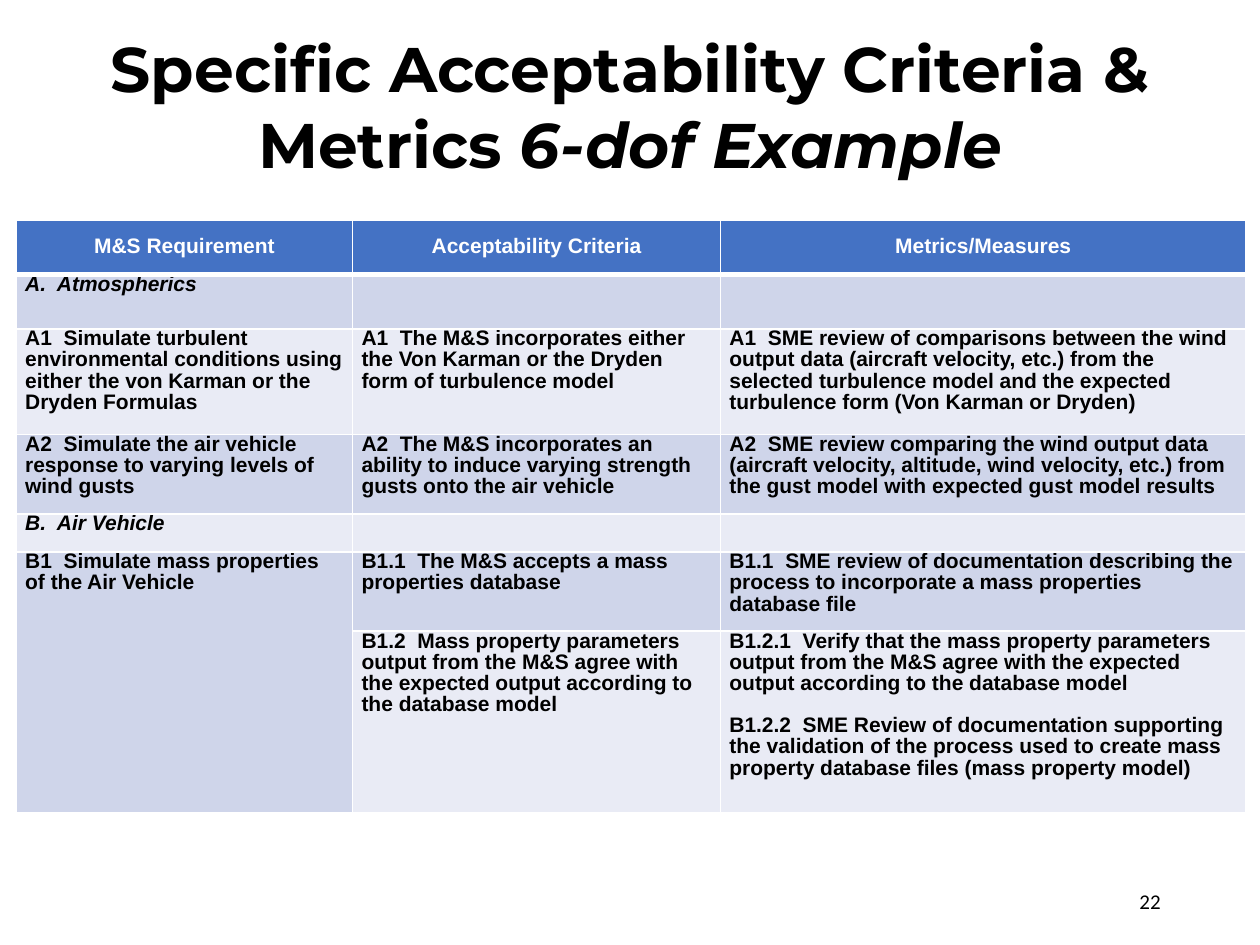
from lxml import etree
from pptx import Presentation
from pptx import util as u
from pptx.dml.color import RGBColor
from pptx.enum import text
from pptx.oxml import ns

WHITE = RGBColor(0xFF, 0xFF, 0xFF)
BLACK = RGBColor(0, 0, 0)
HEADER_BLUE = RGBColor(0x44, 0x72, 0xC4)
DARK_BAND = RGBColor(0xCF, 0xD5, 0xEA)
LIGHT_BAND = RGBColor(0xE9, 0xEB, 0xF5)

TITLE_FONT = {"name": "Montserrat", "size": u.Pt(36), "bold": True}
CELL_FONT = {"name": "Arial", "size": u.Pt(12), "bold": True}
NUMBER_FONT = {"name": "Calibri", "size": u.Pt(12)}
CELL_MARGINS = {
    "margin_left": u.Inches(0.07),
    "margin_right": u.Inches(0.07),
    "margin_top": 0,
    "margin_bottom": 0,
}

COLUMN_WIDTHS = [2.67, 2.92, 4.17]
ROW_HEIGHTS = [0.43, 0.43, 0.84, 0.63, 0.3, 0.63, 1.44]
SECTION_ROWS = (1, 4)
CRITERIA = [
    ["M&S Requirement", "Acceptability Criteria", "Metrics/Measures"],
    ["A.  Atmospherics", "", ""],
    [
        "A1  Simulate turbulent environmental conditions using either the "
        "von Karman or the Dryden Formulas",
        "A1  The M&S incorporates either the Von Karman or the Dryden form "
        "of turbulence model",
        "A1  SME review of comparisons between the wind output data (aircraft "
        "velocity, etc.) from the selected turbulence model and the expected "
        "turbulence form (Von Karman or Dryden)",
    ],
    [
        "A2  Simulate the air vehicle response to varying levels of wind gusts",
        "A2  The M&S incorporates an ability to induce varying strength gusts "
        "onto the air vehicle",
        "A2  SME review comparing the wind output data (aircraft velocity, "
        "altitude, wind velocity, etc.) from the gust model with expected "
        "gust model results",
    ],
    ["B.  Air Vehicle", "", ""],
    [
        "B1  Simulate mass properties of the Air Vehicle",
        "B1.1  The M&S accepts a mass properties database",
        "B1.1  SME review of documentation describing the process to "
        "incorporate a mass properties database file",
    ],
    [
        "",
        "B1.2  Mass property parameters output from the M&S agree with the "
        "expected output according to the database model",
        "B1.2.1  Verify that the mass property parameters output from the M&S "
        "agree with the expected output according to the database model\n"
        "B1.2.2  SME Review of documentation supporting the validation of the "
        "process used to create mass property database files "
        "(mass property model)",
    ],
]


def apply_format(target, values):
    """Set each named attribute on the target."""
    for name, value in values.items():
        setattr(target, name, value)


def add_span(para, words, font, color=BLACK, italic=False):
    """Add a formatted run of words to a paragraph."""
    span = para.add_run()
    span.text = words
    apply_format(span.font, {**font, "italic": italic})
    span.font.color.rgb = color


def place(box, left, top, width, height):
    """Move and size a shape, in inches."""
    values = {"left": left, "top": top, "width": width, "height": height}
    apply_format(box, {name: u.Inches(value) for name, value in values.items()})


def add_title(page):
    """Fill the title placeholder."""
    box = page.shapes.title
    place(box, 0.69, 0.18, 8.62, 1.31)
    apply_format(box.text_frame, {
        "word_wrap": True,
        "vertical_anchor": text.MSO_ANCHOR.MIDDLE,
        "auto_size": text.MSO_AUTO_SIZE.SHAPE_TO_FIT_TEXT,
    })
    para = box.text_frame.paragraphs[0]
    para.alignment = text.PP_ALIGN.CENTER
    add_span(para, "Specific Acceptability Criteria & Metrics ", TITLE_FONT)
    add_span(para, "6-dof Example", TITLE_FONT, italic=True)


def add_borders(cell, top, bottom):
    """Draw white cell borders with the given top and bottom points."""
    properties = cell._tc.get_or_add_tcPr()
    for side, points in {"L": 1, "R": 1, "T": top, "B": bottom}.items():
        line = etree.SubElement(properties, ns.qn(f"a:ln{side}"), w=str(u.Pt(points)))
        fill = etree.SubElement(line, ns.qn("a:solidFill"))
        etree.SubElement(fill, ns.qn("a:srgbClr"), val=str(WHITE))


def fill_cell(cell, words, row):
    """Write and style one cell according to its row."""
    header = row == 0
    apply_format(cell, CELL_MARGINS)
    cell.vertical_anchor = text.MSO_ANCHOR.MIDDLE if header else text.MSO_ANCHOR.TOP
    add_borders(cell, top=3 if row == 1 else 1, bottom=3 if header else 1)
    cell.fill.solid()
    band = DARK_BAND if row % 2 else LIGHT_BAND
    cell.fill.fore_color.rgb = HEADER_BLUE if header else band
    for index, line in enumerate(words.split("\n")):
        frame = cell.text_frame
        para = frame.add_paragraph() if index else frame.paragraphs[0]
        apply_format(para, {
            "alignment": text.PP_ALIGN.CENTER if header else text.PP_ALIGN.LEFT,
            "line_spacing": 0.9,
            "space_before": u.Pt(6 if index else 0),
            "space_after": u.Pt(6),
        })
        apply_format(para.font, CELL_FONT)
        if line:
            add_span(para, line, CELL_FONT, WHITE if header else BLACK,
                     row in SECTION_ROWS)


def add_criteria_table(page):
    """Build the table of requirements, criteria and metrics."""
    table = page.shapes.add_table(
        len(ROW_HEIGHTS), len(COLUMN_WIDTHS), u.Inches(0.13), u.Inches(1.75),
        u.Inches(sum(COLUMN_WIDTHS)), u.Inches(sum(ROW_HEIGHTS))).table
    for column, width in zip(table.columns, COLUMN_WIDTHS):
        column.width = u.Inches(width)
    for table_row, height in zip(table.rows, ROW_HEIGHTS):
        table_row.height = u.Inches(height)
    for row, entries in enumerate(CRITERIA):
        for column, words in enumerate(entries):
            fill_cell(table.cell(row, column), words, row)
    table.cell(5, 0).merge(table.cell(6, 0))


def add_page_number(page):
    """Add the page number at the lower right."""
    box = page.shapes.add_textbox(0, 0, 0, 0)
    place(box, 7.06, 6.95, 2.25, 0.4)
    box.text_frame.word_wrap = True
    box.text_frame.vertical_anchor = text.MSO_ANCHOR.MIDDLE
    para = box.text_frame.paragraphs[0]
    para.alignment = text.PP_ALIGN.RIGHT
    add_span(para, "22", NUMBER_FONT)


def main():
    """Build and save the slide."""
    deck = Presentation()
    deck.slide_width, deck.slide_height = u.Inches(10), u.Inches(7.5)
    page = deck.slides.add_slide(deck.slide_layouts[5])
    add_criteria_table(page)
    add_title(page)
    add_page_number(page)
    deck.save("out.pptx")


if __name__ == "__main__":
    main()
